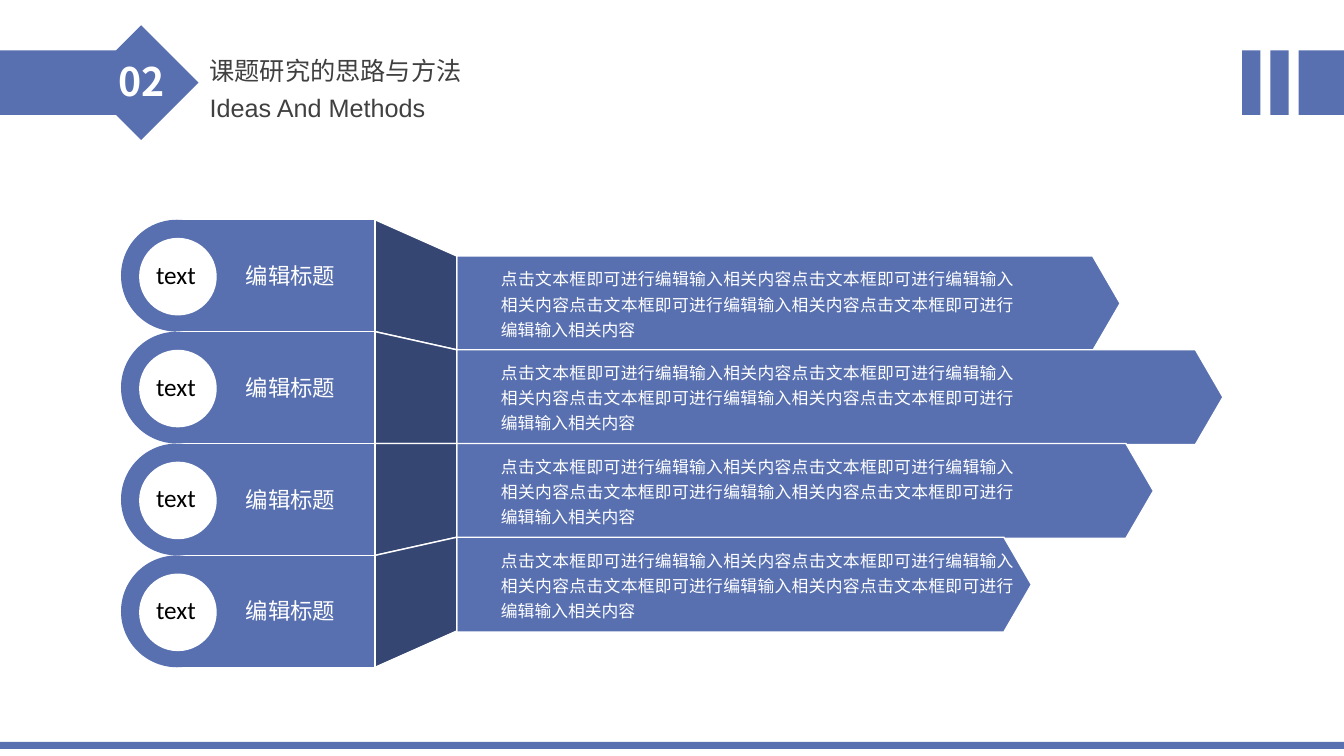
from dataclasses import dataclass

from lxml import etree
from pptx import Presentation
from pptx.dml.color import RGBColor
from pptx.enum.shapes import MSO_SHAPE
from pptx.enum.text import MSO_AUTO_SIZE, PP_ALIGN
from pptx.oxml.ns import qn
from pptx.util import Inches, Pt

RECT, OVAL = MSO_SHAPE.RECTANGLE, MSO_SHAPE.OVAL
DIAMOND, PENTAGON = MSO_SHAPE.DIAMOND, MSO_SHAPE.PENTAGON
LEFT, CENTER, JUSTIFY = PP_ALIGN.LEFT, PP_ALIGN.CENTER, PP_ALIGN.JUSTIFY
FIT = MSO_AUTO_SIZE.SHAPE_TO_FIT_TEXT

COLORS = {
    "blue": "5870B0",
    "navy": "364672",
    "white": "FFFFFF",
    "gray": "404040",
    "black": "000000",
}
CJK = "Noto Sans CJK SC"

TAB_LEFT, TAB_RIGHT, TAB_TOP, TAB_PITCH = 1.75, 3.72, 2.18, 1.11
ARROW_LEFT, ARROW_TOP, ARROW_PITCH, ARROW_HEIGHT = 4.53, 2.54, 0.93, 0.94
BODY = "点击文本框即可进行编辑输入相关内容" * 4


@dataclass
class Item:
    arrow_width: float
    title: str = "编辑标题"
    badge: str = "text"
    body: str = BODY


@dataclass
class Style:
    size: float
    color: str
    font: str = CJK
    bold: bool = False
    align: PP_ALIGN = LEFT
    spacing: float = 1.0
    wrap: bool = True


ITEMS = [Item(6.58), Item(7.6), Item(6.91), Item(5.7)]
NUMBER = Style(28, "white", bold=True, align=CENTER)
HEADING = Style(18, "gray", spacing=2.0, wrap=False)
SUBHEADING = Style(18, "gray", font="Arial")
BADGE = Style(18, "black", font="Calibri", align=CENTER)
TAB_TITLE = Style(16, "white")
BODY_TEXT = Style(12, "white", align=JUSTIFY, spacing=1.25)


def rgb(name: str) -> RGBColor:
    return RGBColor.from_string(COLORS[name])


def paint(sp, fill: str, outlined: bool) -> None:
    sp.shadow.inherit = False
    sp.fill.solid()
    sp.fill.fore_color.rgb = rgb(fill)
    if outlined:
        sp.line.color.rgb = rgb("white")
        sp.line.width = Pt(1)
    else:
        sp.line.fill.background()


def add_block(s, kind, x: float, y: float, w: float, h: float,
              fill: str = "blue", outlined: bool = False):
    sp = s.shapes.add_shape(kind, Inches(x), Inches(y), Inches(w), Inches(h))
    paint(sp, fill, outlined)
    return sp


def add_text(s, text: str, x: float, y: float, w: float, h: float,
             style: Style) -> None:
    tf = s.shapes.add_textbox(Inches(x), Inches(y), Inches(w), Inches(h)).text_frame
    tf.word_wrap = style.wrap
    tf.auto_size = FIT
    tf.text = text
    p = tf.paragraphs[0]
    p.alignment = style.align
    p.line_spacing = style.spacing
    r = p.runs[0]
    r.font.size = Pt(style.size)
    r.font.bold = style.bold
    r.font.name = style.font
    r.font.color.rgb = rgb(style.color)
    ea = etree.SubElement(r.font._element, qn("a:ea"))
    ea.set("typeface", style.font)


def add_fold(s, row: int) -> None:
    """Dark panel joining a tab on the left to its arrow on the right."""
    tab_y = TAB_TOP + row * TAB_PITCH
    arrow_y = ARROW_TOP + row * ARROW_PITCH
    points = [
        (ARROW_LEFT, arrow_y),
        (ARROW_LEFT, arrow_y + ARROW_PITCH),
        (TAB_RIGHT, tab_y + TAB_PITCH),
        (TAB_RIGHT, tab_y),
    ]
    corners = [(Inches(x), Inches(y)) for x, y in points]
    fb = s.shapes.build_freeform(*corners[0])
    fb.add_line_segments(corners[1:], close=True)
    paint(fb.convert_to_shape(), "navy", True)


def add_header(s) -> None:
    add_block(s, RECT, 0, 0.5, 1.15, 0.64)
    add_block(s, DIAMOND, 0.83, 0.25, 1.14, 1.14)
    for x, w in ((12.88, 0.45), (12.6, 0.18), (12.32, 0.18)):
        add_block(s, RECT, x, 0.5, w, 0.64)
    add_text(s, "02", 1.04, 0.52, 0.72, 0.57, NUMBER)
    add_text(s, "课题研究的思路与方法", 1.98, 0.2, 2.73, 0.62, HEADING)
    add_text(s, "Ideas And Methods", 1.98, 0.87, 5.49, 0.4, SUBHEADING)


def add_item(s, row: int, item: Item) -> None:
    tab_y = TAB_TOP + row * TAB_PITCH
    arrow_y = ARROW_TOP + row * ARROW_PITCH
    arrow = add_block(s, PENTAGON, ARROW_LEFT, arrow_y, item.arrow_width,
                      ARROW_HEIGHT, outlined=True)
    arrow.adjustments[0] = 0.29
    add_block(s, RECT, TAB_LEFT, tab_y, TAB_RIGHT - TAB_LEFT, TAB_PITCH, outlined=True)
    add_fold(s, row)
    add_block(s, OVAL, 1.2, tab_y, TAB_PITCH, TAB_PITCH)
    add_block(s, OVAL, 1.38, tab_y + 0.18, 0.77, 0.77, fill="white")
    add_text(s, item.badge, 1.43, tab_y + 0.34, 0.63, 0.39, BADGE)
    add_text(s, item.title, 2.34, tab_y + 0.37, 1.49, 0.37, TAB_TITLE)
    add_text(s, item.body, 4.87, arrow_y + 0.03, 5.29, 0.86, BODY_TEXT)


def main() -> None:
    prs = Presentation()
    prs.slide_width, prs.slide_height = Inches(13.33), Inches(7.5)
    s = prs.slides.add_slide(prs.slide_layouts[6])
    add_header(s)
    add_block(s, RECT, 0, 7.36, 13.33, 0.07)
    for row, item in enumerate(ITEMS):
        add_item(s, row, item)
    prs.save("out.pptx")


if __name__ == "__main__":
    main()
